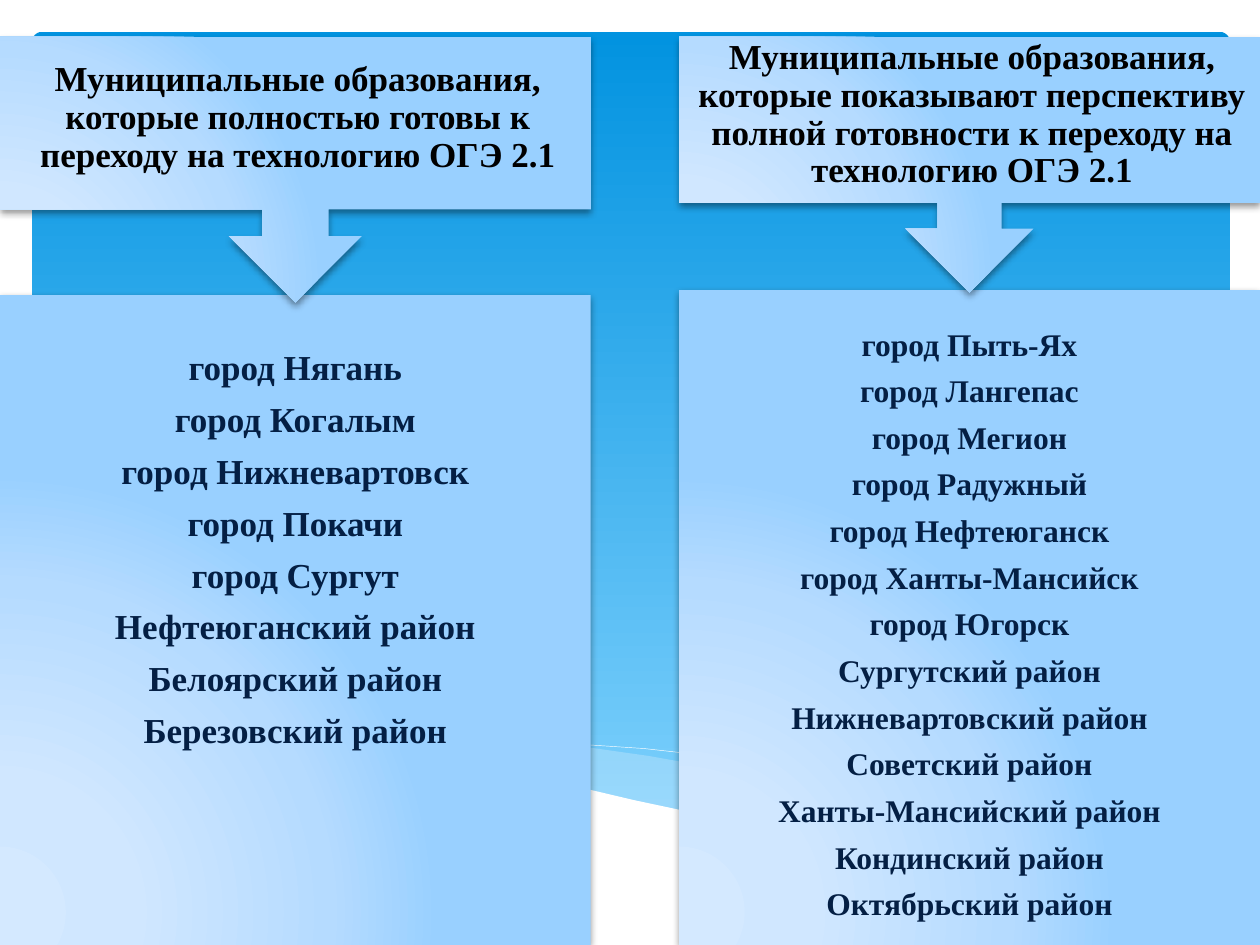
"""Build a slide comparing two groups of municipalities by readiness for OGE 2.1."""
from pptx import Presentation
from pptx.dml.color import RGBColor
from pptx.enum.shapes import MSO_SHAPE as Shape
from pptx.enum.text import MSO_ANCHOR as Anchor, PP_ALIGN as Align
from pptx.oxml import parse_xml
from pptx.oxml.ns import nsdecls
from pptx.util import Cm, Pt

COLORS = {
    "sky_top": "0293E0", "sky_bottom": "83D3FE", "wave": "C6E7FC", "white": "FFFFFF",
    "heading": "000000", "list": "041F44", "shadow": "000000",
}
PANEL_STOPS = {0: "D4E9FF", 30: "D0E7FF", 75: "B5DBFF", 100: "99D0FF"}
FONT = "Times New Roman"

WAVES = [
    ("wave", 29, [(24.8, 15.27), (21.89, 15.88), (19.15, 16.51), (16.81, 16.94), (18.26, 17.12),
                  (19.86, 17.25), (21.72, 17.22), (23.42, 16.94), (24.82, 16.48)]),
    ("wave", 40, [(22.71, 17.15), (20.52, 16.81), (17.96, 16.31), (16, 15.85), (14.48, 15.49),
                  (13.08, 15.24), (11.81, 15.06), (10.16, 14.94), (8.76, 14.94), (7.29, 15.06),
                  (9.22, 15.34), (11.43, 15.85), (13.46, 16.31), (15.29, 16.69), (17.3, 17.02),
                  (19.02, 17.22), (20.8, 17.27)]),
    ("line", 100, [(7.87, 15.16), (9.22, 14.99), (11, 14.96), (12.98, 15.09), (14.78, 15.29),
                   (16.92, 15.62), (19.33, 16.13), (21.13, 16.56), (23.06, 17.09)]),
    ("line", 100, [(15.6, 16.74), (18.31, 16.03), (20.5, 15.54), (22.78, 15.14), (24.79, 14.91)]),
    ("white", 100, [(24.82, 16.46), (23.37, 16.94), (21.59, 17.2), (19.33, 17.2), (16.97, 16.94),
                    (14.71, 16.54), (12.78, 16.13), (10.62, 15.62), (8.64, 15.21), (6.88, 14.99),
                    (4.9, 14.88), (3.02, 14.96), (1.7, 15.21), (0.58, 15.62), (0.58, 18.57),
                    (24.82, 18.57)]),
]

COLUMNS = [
    {
        "left": 13.69, "width": 11.71, "top": 5.84, "callout": 5.16, "size": 18, "inset": 0.79,
        "heading": "Муниципальные образования, которые показывают перспективу "
                   "полной готовности к переходу на технологию ОГЭ 2.1",
        "places": ["город Пыть-Ях", "город Лангепас", "город Мегион", "город Радужный",
                   "город Нефтеюганск", "город Ханты-Мансийск", "город Югорск",
                   "Сургутский район", "Нижневартовский район", "Советский район",
                   "Ханты-Мансийский район", "Кондинский район", "Октябрьский район"],
    },
    {
        "left": 0, "width": 11.91, "top": 5.94, "callout": 5.36, "size": 20, "inset": 1.13,
        "heading": "Муниципальные образования, которые полностью готовы "
                   "к переходу на технологию ОГЭ 2.1",
        "places": ["город Нягань", "город Когалым", "город Нижневартовск", "город Покачи",
                   "город Сургут", "Нефтеюганский район", "Белоярский район",
                   "Березовский район"],
    },
]


def add_panel(kind, left, top, width, height):
    panel = page.shapes.add_shape(kind, Cm(left), Cm(top), Cm(width), Cm(height))
    panel.line.fill.background()
    stops = "".join(f'<a:gs pos="{pos * 1000}"><a:srgbClr val="{color}"/></a:gs>'
                    for pos, color in PANEL_STOPS.items())
    gradient = parse_xml(
        f'<a:gradFill {nsdecls("a")} rotWithShape="1"><a:gsLst>{stops}</a:gsLst>'
        '<a:path path="circle"><a:fillToRect l="5000" t="100000" r="120000" b="10000"/>'
        '</a:path></a:gradFill>')
    panel.line._ln.addprevious(gradient)
    panel._element.spPr.append(parse_xml(
        f'<a:effectLst {nsdecls("a")}><a:outerShdw blurRad="{Pt(4)}" dist="{Pt(2)}" dir="5400000" '
        f'rotWithShape="0"><a:srgbClr val="{COLORS["shadow"]}"><a:alpha val="40000"/></a:srgbClr>'
        '</a:outerShdw></a:effectLst>'))
    return panel


def write_lines(panel, lines, size, color, anchor, insets):
    frame = panel.text_frame
    frame.word_wrap = True
    frame.vertical_anchor = anchor
    frame.margin_left, frame.margin_top, frame.margin_right, frame.margin_bottom = map(Cm, insets)
    for index, line in enumerate(lines):
        para = frame.add_paragraph() if index else frame.paragraphs[0]
        para.alignment = Align.CENTER
        para.line_spacing = 0.9
        para.space_after = Pt(round(size * 0.4, 1))
        run = para.add_run()
        run.text = line
        run.font.name = FONT
        run.font.size = Pt(size)
        run.font.bold = True
        run.font.color.rgb = RGBColor.from_string(COLORS[color])


deck = Presentation()
deck.slide_width, deck.slide_height = Cm(25.4), Cm(19.05)
page = deck.slides.add_slide(deck.slide_layouts[6])

sky = page.shapes.add_shape(Shape.ROUNDED_RECTANGLE, Cm(0.64), Cm(0.64), Cm(24.16), Cm(16.76))
sky.adjustments[0] = 0.013
sky.shadow.inherit = False
sky.line.fill.background()
sky.fill.gradient()
sky.fill.gradient_angle = 270
for stop, position, name in zip(sky.fill.gradient_stops, (0, 1), ("sky_top", "sky_bottom")):
    stop.position = position
    stop.color.rgb = RGBColor.from_string(COLORS[name])

for name, opacity, points in WAVES:
    start, *rest = [(Cm(x), Cm(y)) for x, y in points]
    builder = page.shapes.build_freeform(*start)
    builder.add_line_segments(rest, close=name != "line")
    wave = builder.convert_to_shape()
    wave.shadow.inherit = False
    if name == "line":
        wave.fill.background()
        wave.line.color.rgb = RGBColor.from_string(COLORS["white"])
        wave.line.width = Pt(0.25)
        continue
    wave.line.fill.background()
    wave.fill.solid()
    wave.fill.fore_color.rgb = RGBColor.from_string(COLORS[name])
    if opacity < 100:
        tint = wave._element.spPr.find("{*}solidFill")[0]
        tint.append(parse_xml(f'<a:alpha {nsdecls("a")} val="{opacity * 1000}"/>'))

for column in COLUMNS:
    left, top, width = column["left"], column["top"], column["width"]
    box = add_panel(Shape.RECTANGLE, left, top, width, 19.05 - top)
    write_lines(box, column["places"], column["size"], "list", Anchor.TOP,
                (0.4, column["inset"], 0.4, 0.4))
    callout = add_panel(Shape.DOWN_ARROW_CALLOUT, left, 0.74, width, column["callout"])
    write_lines(callout, [column["heading"]], 20, "heading", Anchor.MIDDLE, (0.1, 0.2, 0, 0.4))

deck.save("out.pptx")
